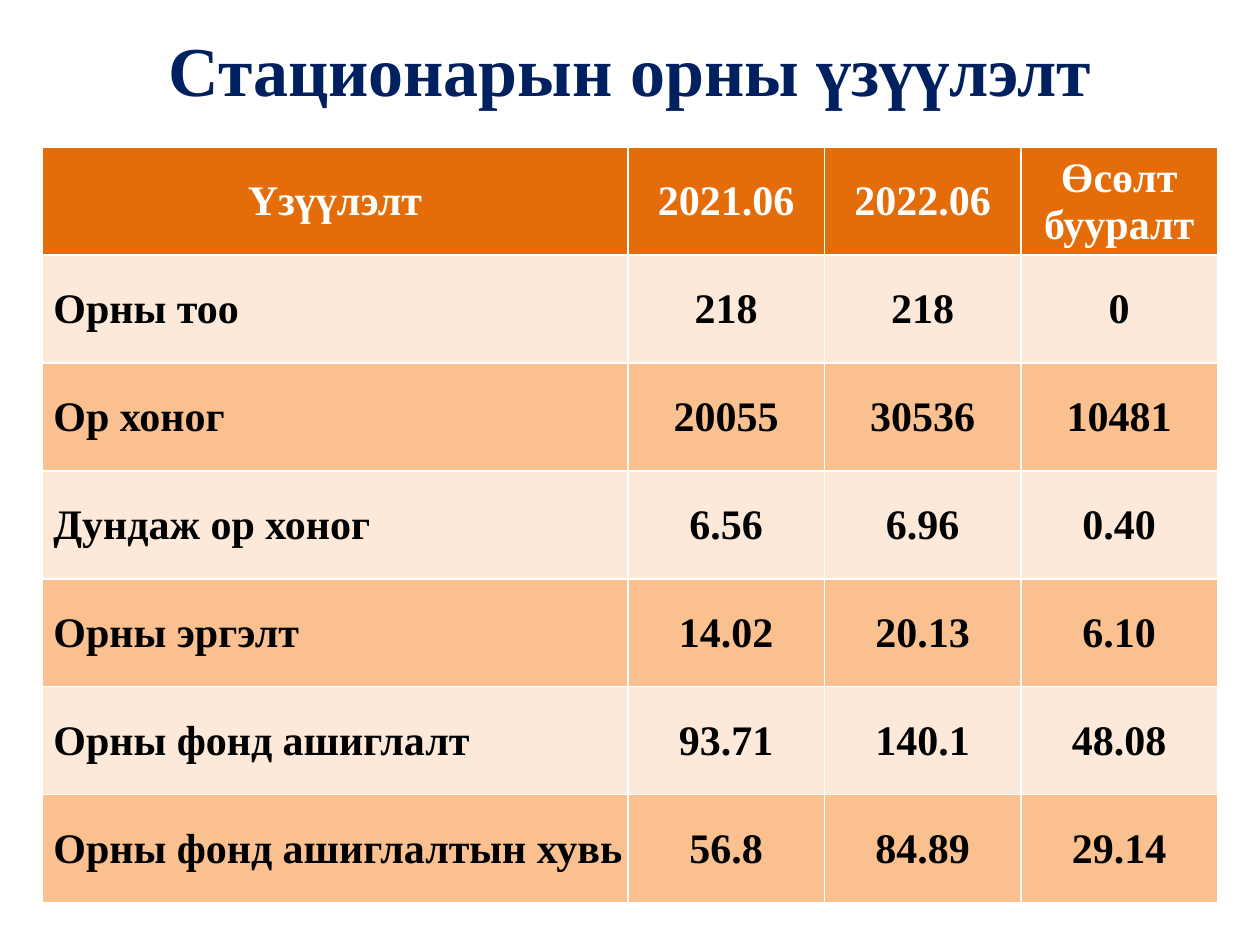
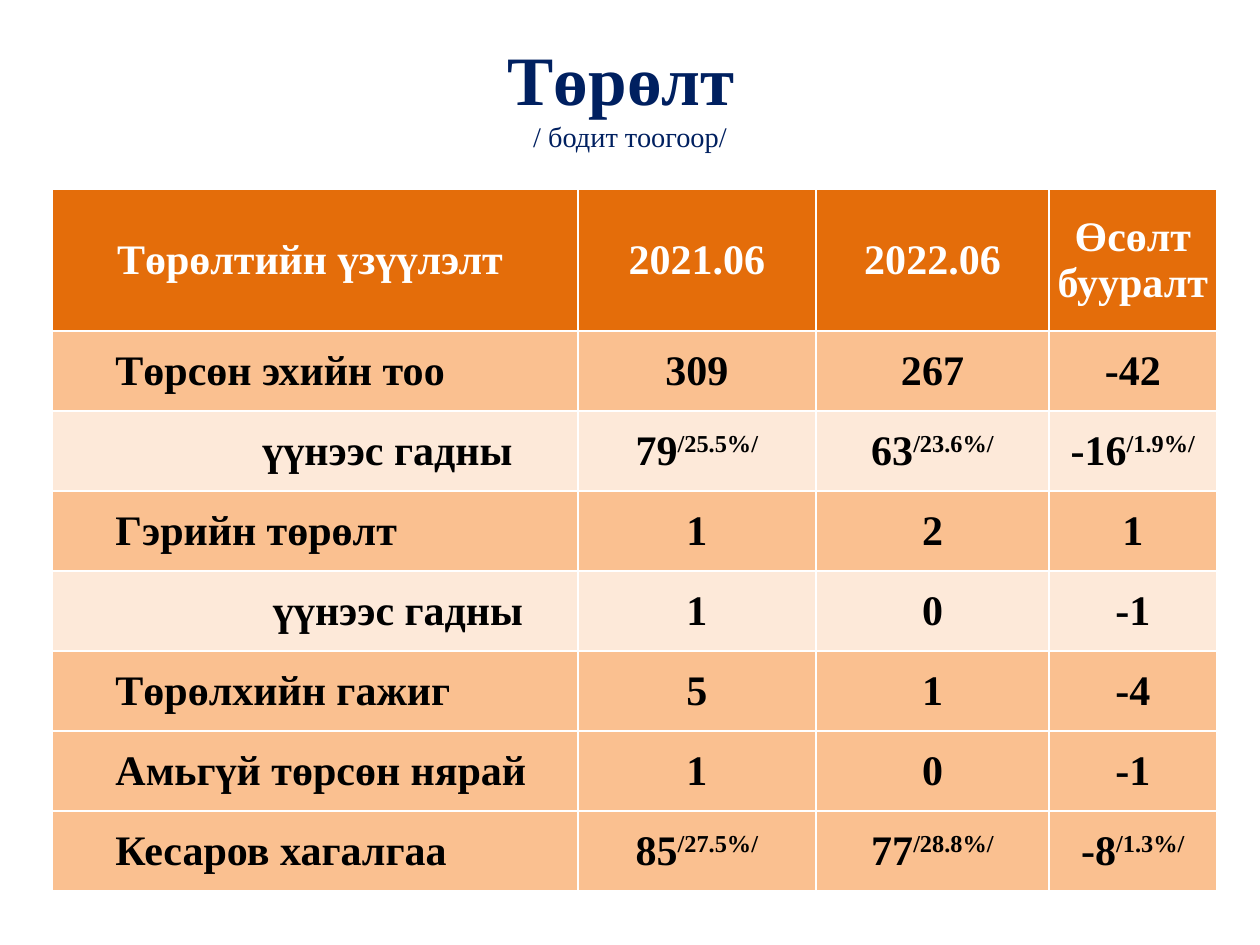
from copy import deepcopy

from lxml import etree
from pptx import Presentation
from pptx.dml.color import RGBColor
from pptx.enum.text import MSO_ANCHOR, MSO_AUTO_SIZE, PP_ALIGN
from pptx.oxml.ns import qn
from pptx.util import Pt

MIDDLE = MSO_ANCHOR.MIDDLE
NO_FIT = MSO_AUTO_SIZE.NONE
CENTER, LEFT = PP_ALIGN.CENTER, PP_ALIGN.LEFT

FONT = "Times New Roman"
NAVY, WHITE, BLACK = "002060", "FFFFFF", "000000"
ORANGE, PEACH, CREAM = "E46D0A", "FAC090", "FDE9D9"
TITLE_ONLY = 5
CELL_SIZE = 24
THIN, THICK = 1, 1.5

# Content: title lines are (text, size, bold); body rows are (fill, label indent, cells)
SLIDES = [
    {
        "title_box": (36, 0, 648, 78),
        "title": [("Стационарын орны үзүүлэлт", 40, True)],
        "table_at": (24, 84),
        "columns": [334.8, 112.3, 112.3, 112.3],
        "header_height": 61.7,
        "row_height": 61.7,
        "cell_margin": 0.72,
        "header": ["Үзүүлэлт", "2021.06", "2022.06", "Өсөлт бууралт"],
        "rows": [
            (CREAM, 6.5, ["Орны тоо", "218", "218", "0"]),
            (PEACH, 6.5, ["Ор хоног", "20055", "30536", "10481"]),
            (CREAM, 6.5, ["Дундаж ор хоног", "6.56", "6.96", "0.40"]),
            (PEACH, 6.5, ["Орны эргэлт", "14.02", "20.13", "6.10"]),
            (CREAM, 6.5, ["Орны фонд ашиглалт", "93.71", "140.1", "48.08"]),
            (PEACH, 6.5, ["Орны фонд ашиглалтын хувь", "56.8", "84.89", "29.14"]),
        ],
    },
    {
        "title_box": (36, 24, 648, 60),
        "title": [("Төрөлт ", 39.6, True), ("/ бодит тоогоор/", 16.2, False)],
        "table_at": (30, 108),
        "columns": [300.2, 136.1, 133.2, 95.8],
        "header_height": 81.2,
        "row_height": 45.7,
        "cell_margin": 0,
        "header": ["Төрөлтийн үзүүлэлт ", "2021.06", "2022.06", "Өсөлт бууралт"],
        "rows": [
            (PEACH, 36, ["Төрсөн эхийн тоо", "309", "267", "-42"]),
            (CREAM, 120, ["үүнээс гадны", "79/25.5%/", "63/23.6%/", "-16/1.9%/"]),
            (PEACH, 36, ["Гэрийн төрөлт", "1", "2", "1"]),
            (CREAM, 126, ["үүнээс гадны", "1", "0", "-1"]),
            (PEACH, 36, ["Төрөлхийн гажиг", "5", "1", "-4"]),
            (PEACH, 36, ["Амьгүй төрсөн нярай", "1", "0", "-1"]),
            (PEACH, 36, ["Кесаров хагалгаа", "85/27.5%/", "77/28.8%/", "-8/1.3%/"]),
        ],
    },
]


def color(value):
    return RGBColor.from_string(value)


def add_run(paragraph, text, size, text_color, bold=True):
    run = paragraph.add_run()
    run.text = text
    run.font.name = FONT
    run.font.size = Pt(size)
    run.font.bold = bold
    run.font.color.rgb = color(text_color)
    return run


def add_title(slide, box, lines):
    title = slide.shapes.title
    title.left, title.top, title.width, title.height = map(Pt, box)
    frame = title.text_frame
    frame.auto_size = NO_FIT
    frame.vertical_anchor = MIDDLE
    paragraph = frame.paragraphs[0]
    paragraph.alignment = CENTER
    run = None
    for text, size, bold in lines:
        if run is not None:
            # The break takes the format of the line it ends
            paragraph.add_line_break()
            paragraph._p[-1].append(deepcopy(run._r.rPr))
        run = add_run(paragraph, text, size, NAVY, bold)


def add_borders(cell, top, bottom):
    properties = cell._tc.get_or_add_tcPr()
    for side, width in (("L", THIN), ("R", THIN), ("T", top), ("B", bottom)):
        line = etree.SubElement(properties, qn("a:ln" + side), w=str(int(Pt(width))))
        fill = etree.SubElement(line, qn("a:solidFill"))
        etree.SubElement(fill, qn("a:srgbClr"), val=WHITE)


def fill_cell(cell, text, fill, text_color, alignment, margin, indent):
    cell.fill.solid()
    cell.fill.fore_color.rgb = color(fill)
    cell.vertical_anchor = MIDDLE
    cell.margin_left = Pt(indent)
    cell.margin_top = cell.margin_right = Pt(margin)
    cell.margin_bottom = 0
    paragraph = cell.text_frame.paragraphs[0]
    paragraph.alignment = alignment
    # A share between slashes is raised after its number
    number, slash, share = text.partition("/")
    add_run(paragraph, number, CELL_SIZE, text_color)
    if slash:
        raised = add_run(paragraph, slash + share, CELL_SIZE, text_color)
        raised._r.get_or_add_rPr().set("baseline", "30000")


def add_indicator_table(slide, content):
    margin = content["cell_margin"]
    rows = [(ORANGE, margin, content["header"])] + content["rows"]
    heights = [content["header_height"]] + [content["row_height"]] * len(content["rows"])
    widths = content["columns"]
    left, top = content["table_at"]
    table = slide.shapes.add_table(
        len(rows), len(widths), Pt(left), Pt(top), Pt(sum(widths)), Pt(sum(heights))
    ).table
    for column, width in zip(table.columns, widths):
        column.width = Pt(width)
    for row, height in zip(table.rows, heights):
        row.height = Pt(height)

    for row_index, (fill, label_indent, texts) in enumerate(rows):
        is_header = row_index == 0
        for column_index, text in enumerate(texts):
            is_label = column_index == 0 and not is_header
            cell = table.cell(row_index, column_index)
            add_borders(
                cell,
                top=THICK if row_index == 1 else THIN,
                bottom=THICK if is_header else THIN,
            )
            fill_cell(
                cell, text, fill,
                text_color=WHITE if is_header else BLACK,
                alignment=LEFT if is_label else CENTER,
                margin=margin,
                indent=label_indent if is_label else margin,
            )


def main():
    presentation = Presentation()
    presentation.slide_width, presentation.slide_height = Pt(720), Pt(540)
    for content in SLIDES:
        slide = presentation.slides.add_slide(presentation.slide_layouts[TITLE_ONLY])
        add_title(slide, content["title_box"], content["title"])
        add_indicator_table(slide, content)
    presentation.save("out.pptx")


if __name__ == "__main__":
    main()
